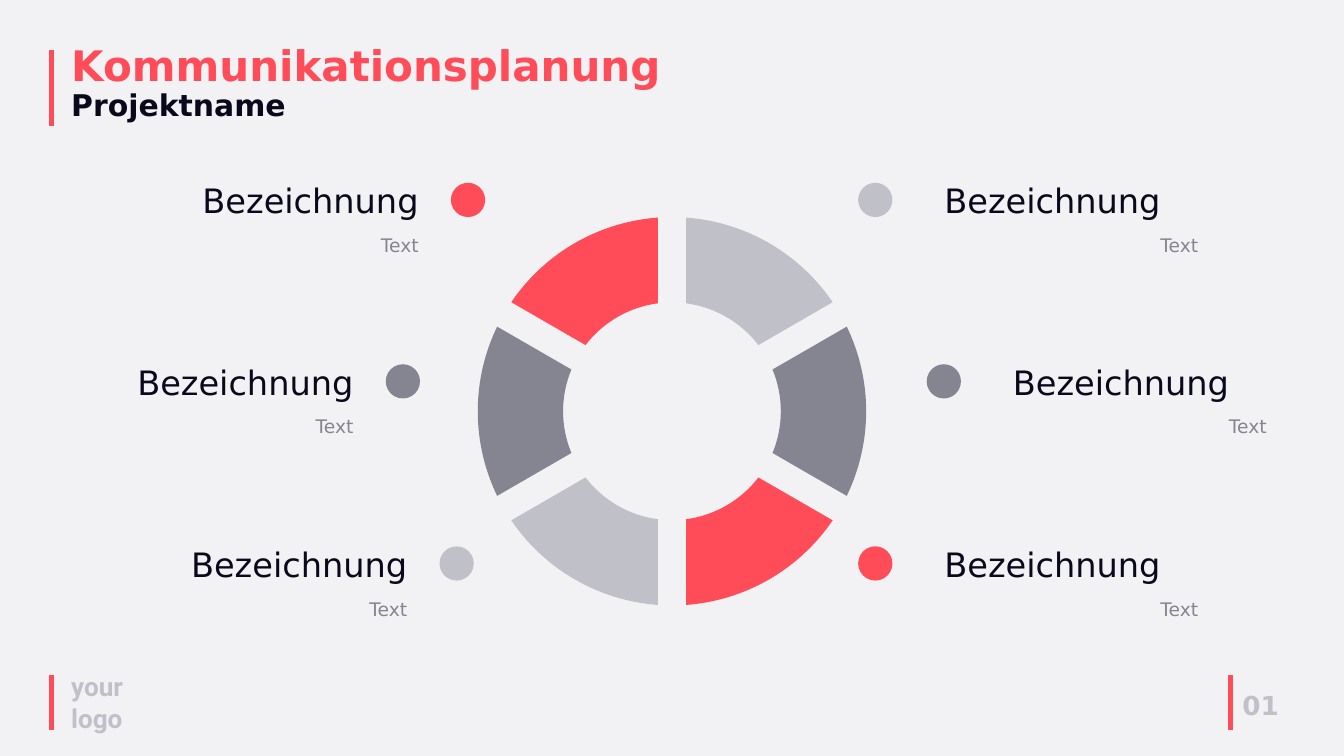
from dataclasses import dataclass
from math import asin, atan2, cos, pi, sin, tan

from lxml.etree import Element, SubElement
from pptx import Presentation
from pptx.dml.color import RGBColor
from pptx.enum.shapes import MSO_CONNECTOR as Conn, MSO_SHAPE as Shape
from pptx.enum.text import MSO_ANCHOR as Anchor, MSO_AUTO_SIZE as AutoSize, PP_ALIGN as Align
from pptx.oxml.ns import qn
from pptx.util import Inches, Pt

RED = RGBColor(0xFF, 0x4C, 0x58)
DARK = RGBColor(0x85, 0x85, 0x91)
LIGHT = RGBColor(0xC0, 0xC0, 0xC8)
INK = RGBColor(0x0A, 0x09, 0x1B)
BACKGROUND = RGBColor(0xF2, 0xF2, 0xF5)
FONT = "DejaVu Sans"

CENTER_X, CENTER_Y = Inches(10), Inches(6.12)
OUTER, INNER = 2.89, 1.62
HALF_GAP = 0.21
DOT = 0.51
NAME_W, TEXT_W = 3.54, 4.1

Point = tuple[int, int]


@dataclass(frozen=True)
class Bar:
    x: float
    top: float
    bottom: float


@dataclass(frozen=True)
class Label:
    dot_x: float
    dot_y: float
    color: RGBColor
    left_side: bool


BARS = [Bar(0.77, 0.75, 1.88), Bar(0.77, 10.05, 10.86), Bar(18.31, 10.05, 10.86)]
SEGMENT_COLORS = [LIGHT, DARK, RED] * 2
LABELS = [
    Label(6.71, 2.72, RED, True),
    Label(5.74, 5.42, DARK, True),
    Label(6.54, 8.13, LIGHT, True),
    Label(12.77, 2.72, LIGHT, False),
    Label(13.79, 5.42, DARK, False),
    Label(12.77, 8.13, RED, False),
]


def add_run(p, text: str, size: float, color: RGBColor, bold: bool = False, font: str = FONT) -> None:
    r = p.add_run()
    r.text = text
    r.font.name = font
    r.font.size = Pt(size)
    r.font.bold = bold
    r.font.color.rgb = color


def add_text(shapes, x: float, y: float, w: float, h: float, text: str, size: float,
             color: RGBColor, align: Align = Align.LEFT, bold: bool = False, font: str = FONT) -> None:
    tf = shapes.add_textbox(Inches(x), Inches(y), Inches(w), Inches(h)).text_frame
    tf.word_wrap = True
    tf.auto_size = AutoSize.SHAPE_TO_FIT_TEXT
    p = tf.paragraphs[0]
    p.alignment = align
    add_run(p, text, size, color, bold, font)


def paint(sp, color: RGBColor) -> None:
    sp.shadow.inherit = False
    sp.fill.solid()
    sp.fill.fore_color.rgb = color
    sp.line.fill.background()


def add_bar(shapes, bar: Bar) -> None:
    line = shapes.add_connector(Conn.STRAIGHT, Inches(bar.x), Inches(bar.top),
                                Inches(bar.x), Inches(bar.bottom))
    line.line.color.rgb = RED
    line.line.width = Pt(5)
    SubElement(line._element.spPr, qn("a:effectLst"))


def arc_points(radius: float, start: float, end: float) -> list[Point]:
    inset = asin(HALF_GAP / radius)
    angles = (start + inset, (start + end) / 2, end - inset)
    return [(CENTER_X + Inches(radius * sin(a)), CENTER_Y - Inches(radius * cos(a))) for a in angles]


def bend(side, sp, start: Point, end: Point) -> None:
    (x0, y0), (x1, y1) = start, end
    dx0, dy0, dx1, dy1 = x0 - CENTER_X, y0 - CENTER_Y, x1 - CENTER_X, y1 - CENTER_Y
    turn = atan2(dx0 * dy1 - dy0 * dx1, dx0 * dx1 + dy0 * dy1)
    k = 4 / 3 * tan(turn / 4)
    curve = Element(qn("a:cubicBezTo"))
    for x, y in ((x0 - k * dy0, y0 + k * dx0), (x1 + k * dy1, y1 - k * dx1), end):
        SubElement(curve, qn("a:pt"), x=str(round(x - sp.left)), y=str(round(y - sp.top)))
    side.getparent().replace(side, curve)


def add_segment(shapes, index: int, color: RGBColor) -> None:
    start, end = index * pi / 3, (index + 1) * pi / 3
    points = arc_points(OUTER, start, end) + arc_points(INNER, start, end)[::-1]
    builder = shapes.build_freeform(*points[0])
    builder.add_line_segments(points[1:], close=True)
    sp = builder.convert_to_shape()
    sides = list(sp._element.iter(qn("a:lnTo")))
    for i in (0, 1, 3, 4):
        bend(sides[i], sp, points[i], points[i + 1])
    paint(sp, color)


def add_label(shapes, label: Label) -> None:
    group = shapes.add_group_shape().shapes
    if label.left_side:
        right = label.dot_x - 0.38
        name_x, text_x = right - NAME_W, right - TEXT_W
    else:
        name_x = text_x = label.dot_x + 1.06
    add_text(group, name_x, label.dot_y - 0.09, NAME_W, 0.71, "Bezeichnung", 36, INK, Align.RIGHT)
    add_text(group, text_x, label.dot_y + 0.71, TEXT_W, 0.44, "Text", 20, DARK, Align.RIGHT)
    paint(group.add_shape(Shape.OVAL, Inches(label.dot_x), Inches(label.dot_y),
                          Inches(DOT), Inches(DOT)), label.color)


def set_title(title) -> None:
    title.left, title.top = Inches(0.96), Inches(0.62)
    title.width, title.height = Inches(9.12), Inches(1.27)
    tf = title.text_frame
    tf.word_wrap = True
    tf.auto_size = AutoSize.SHAPE_TO_FIT_TEXT
    tf.vertical_anchor = Anchor.TOP
    p = tf.paragraphs[0]
    p.alignment = Align.LEFT
    p.line_spacing = 0.9
    add_run(p, "Kommunikationsplanung", 45, RED, True)
    p.add_line_break()
    add_run(p, "Projektname", 32, INK, True)


def main() -> None:
    prs = Presentation()
    prs.slide_width, prs.slide_height = Inches(20), Inches(11.25)
    s = prs.slides.add_slide(prs.slide_layouts[5])
    s.background.fill.solid()
    s.background.fill.fore_color.rgb = BACKGROUND

    set_title(s.shapes.title)
    for bar in BARS:
        add_bar(s.shapes, bar)
    add_text(s.shapes, 0.96, 9.93, 1.19, 1.04, "your logo", 28, LIGHT, bold=True, font="Roboto")
    add_text(s.shapes, 18.39, 10.21, 1.9, 0.57, "01", 28, LIGHT, bold=True)

    ring = s.shapes.add_group_shape().shapes
    for index, color in enumerate(SEGMENT_COLORS):
        add_segment(ring, index, color)
    for label in LABELS:
        add_label(s.shapes, label)

    prs.save("out.pptx")


if __name__ == "__main__":
    main()
